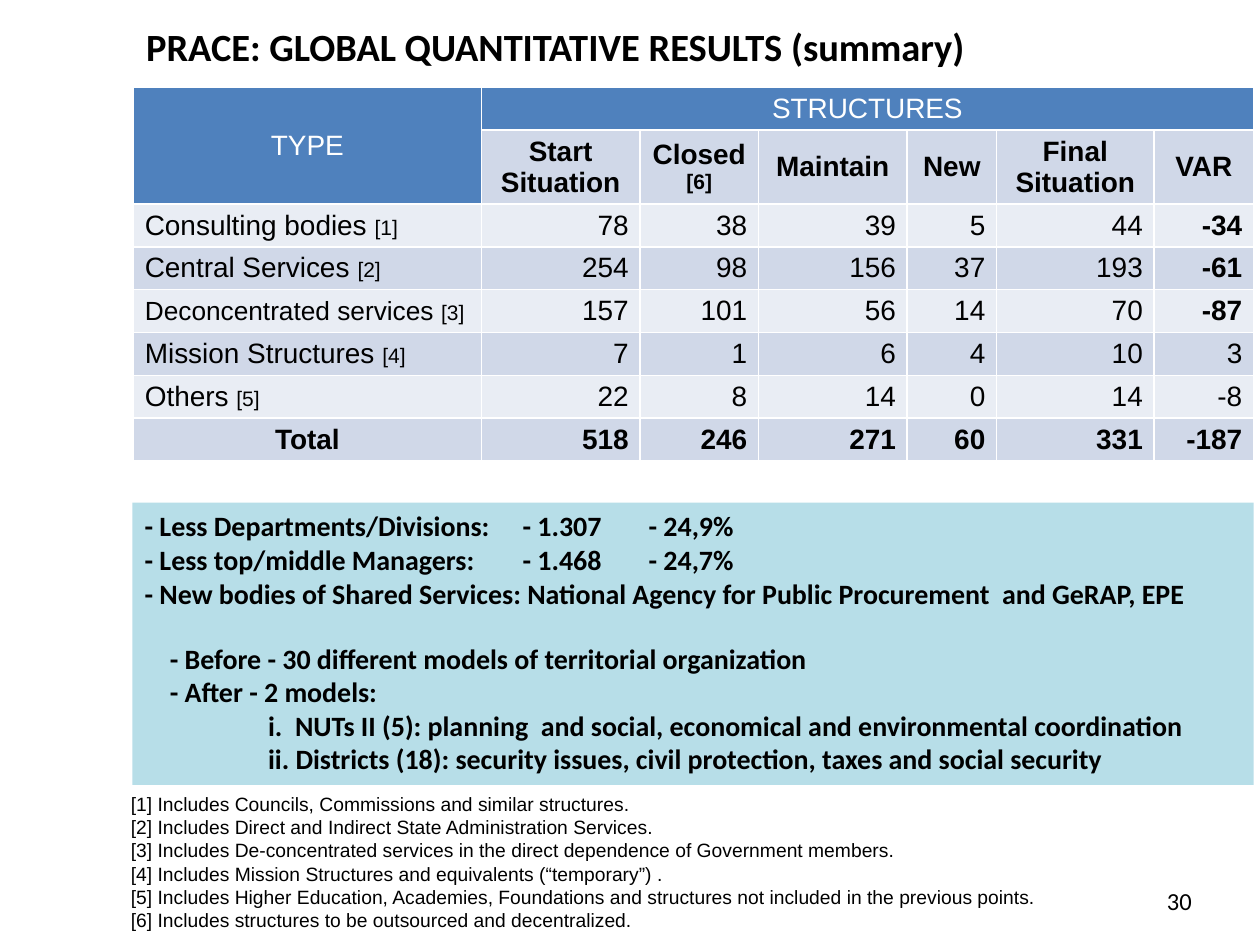
from dataclasses import dataclass

import pptx
import pptx.dml.color
import pptx.enum.shapes
import pptx.enum.text
import pptx.oxml
import pptx.oxml.ns
import pptx.util
from lxml import etree

Inches = pptx.util.Inches
Pt = pptx.util.Pt
ALIGN = pptx.enum.text.PP_ALIGN
ANCHOR = pptx.enum.text.MSO_ANCHOR
qn = pptx.oxml.ns.qn


@dataclass(frozen=True)
class Theme:
    heading_font: str = "Calibri"
    table_font: str = "Arial"
    ink: str = "000000"
    white: str = "FFFFFF"
    header: str = "4F81BD"
    band_dark: str = "D0D8E8"
    band_light: str = "E9EDF4"
    panel: str = "B7DEE8"
    title_size: int = 22
    body_size: int = 16
    tight_size: int = 15
    number_size: int = 14
    note_size: int = 12
    footnote_size: int = 11
    cell_inset: float = 0.09
    border_width: int = 1


def rgb(value):
    return pptx.dml.color.RGBColor.from_string(value)


class SlideBuilder:
    def __init__(self, presentation, theme):
        self.theme = theme
        self.slide = presentation.slides.add_slide(presentation.slide_layouts[5])

    def style(self, paragraph, font, size, color=None, bold=False, align=ALIGN.LEFT):
        paragraph.alignment = align
        paragraph.font.name = font
        paragraph.font.size = Pt(size)
        paragraph.font.bold = bold
        paragraph.font.color.rgb = rgb(color or self.theme.ink)

    def paragraphs(self, frame, lines):
        for index, line in enumerate(lines):
            paragraph = frame.add_paragraph() if index else frame.paragraphs[0]
            paragraph.add_run().text = line
            yield paragraph

    def title(self, text, left, top, width, height):
        heading = self.slide.shapes.title
        heading.left, heading.top = Inches(left), Inches(top)
        heading.width, heading.height = Inches(width), Inches(height)
        frame = heading.text_frame
        frame.word_wrap = False
        frame.auto_size = pptx.enum.text.MSO_AUTO_SIZE.NONE
        frame.vertical_anchor = ANCHOR.TOP
        frame.text = text
        self.style(frame.paragraphs[0], self.theme.heading_font,
                   self.theme.title_size, bold=True)

    def text(self, lines, left, top, width, height, font, size,
             align=ALIGN.LEFT, anchor=ANCHOR.TOP):
        box = self.slide.shapes.add_textbox(
            Inches(left), Inches(top), Inches(width), Inches(height))
        frame = box.text_frame
        frame.word_wrap = True
        frame.vertical_anchor = anchor
        for paragraph in self.paragraphs(frame, lines):
            self.style(paragraph, font, size, align=align)

    def panel(self, items, tab_stops, left, top, width, height):
        rectangle = self.slide.shapes.add_shape(
            pptx.enum.shapes.MSO_SHAPE.RECTANGLE,
            Inches(left), Inches(top), Inches(width), Inches(height))
        rectangle.shadow.inherit = False
        rectangle.fill.solid()
        rectangle.fill.fore_color.rgb = rgb(self.theme.panel)
        rectangle.line.fill.background()
        frame = rectangle.text_frame
        frame.word_wrap = True
        frame.vertical_anchor = ANCHOR.TOP
        lines = [line for line, *_ in items]
        for paragraph, (line, margin, hanging, gap) in zip(
                self.paragraphs(frame, lines), items):
            properties = paragraph._p.get_or_add_pPr()
            properties.set("marL", str(Inches(margin)))
            properties.set("indent", str(Inches(hanging)))
            if gap:
                paragraph.space_before = Pt(gap)
            if "\t" in line:
                tabs = etree.SubElement(properties, qn("a:tabLst"))
                for stop in tab_stops:
                    etree.SubElement(tabs, qn("a:tab"), pos=str(Inches(stop)), algn="l")
            self.style(paragraph, self.theme.heading_font, self.theme.body_size, bold=True)

    def border(self, cell):
        properties = cell._tc.get_or_add_tcPr()
        for side in ("lnL", "lnR", "lnT", "lnB"):
            line = etree.SubElement(properties, qn(f"a:{side}"),
                                    w=str(Pt(self.theme.border_width)))
            fill = etree.SubElement(line, qn("a:solidFill"))
            etree.SubElement(fill, qn("a:srgbClr"), val=self.theme.white)

    def cell(self, cell, lines, note="", size=None, color=None, bold=False,
             align=ALIGN.CENTER):
        cell.vertical_anchor = ANCHOR.MIDDLE
        for paragraph in self.paragraphs(cell.text_frame, lines):
            if note:
                paragraph.runs[0].text += " "
                mark = paragraph.add_run()
                mark.text = note
                mark.font.size = Pt(self.theme.note_size)
            self.style(paragraph, self.theme.table_font,
                       size or self.theme.body_size, color, bold, align)

    def table(self, headings, bodies, totals, left, top, widths, heights):
        theme = self.theme
        grid = self.slide.shapes.add_table(
            len(heights), len(widths), Inches(left), Inches(top),
            Inches(sum(widths)), Inches(sum(heights))).table
        grid.first_row = grid.horz_banding = False
        for column, width in zip(grid.columns, widths):
            column.width = Inches(width)
        for row_index, (row, height) in enumerate(zip(grid.rows, heights)):
            row.height = Inches(height)
            band = theme.band_dark if row_index % 2 else theme.band_light
            for column_index, cell in enumerate(row.cells):
                is_header = row_index == 0 or (row_index == 1 and column_index == 0)
                self.border(cell)
                cell.fill.solid()
                cell.fill.fore_color.rgb = rgb(theme.header if is_header else band)
                cell.margin_left = cell.margin_right = Inches(theme.cell_inset)
                cell.margin_top = cell.margin_bottom = Inches(theme.cell_inset / 2)
        grid.cell(0, 0).merge(grid.cell(1, 0))
        grid.cell(0, 1).merge(grid.cell(0, len(widths) - 1))
        self.cell(grid.cell(0, 0), ["TYPE"], color=theme.white)
        self.cell(grid.cell(0, 1), ["STRUCTURES"], color=theme.white)
        for column, (lines, note) in enumerate(headings, 1):
            self.cell(grid.cell(1, column), lines, note, bold=True)
        for row, (label, size, values, strong) in enumerate(bodies, 2):
            self.cell(grid.cell(row, 0), [label], f"[{row - 1}]", size, align=ALIGN.LEFT)
            for column, value in enumerate(values, 1):
                self.cell(grid.cell(row, column), [str(value)],
                          bold=strong and column == len(values), align=ALIGN.RIGHT)
        last = len(heights) - 1
        self.cell(grid.cell(last, 0), ["Total"], bold=True)
        for column, value in enumerate(totals, 1):
            self.cell(grid.cell(last, column), [str(value)], bold=True, align=ALIGN.RIGHT)


def main():
    presentation = pptx.Presentation()
    presentation.slide_width, presentation.slide_height = Inches(10), Inches(7.5)
    theme = Theme()
    builder = SlideBuilder(presentation, theme)

    headings = [(["Start", "Situation"], ""), (["Closed"], "[6]"), (["Maintain"], ""),
                (["New"], ""), (["Final Situation"], ""), (["VAR"], "")]
    bodies = [
        ("Consulting bodies", theme.body_size, (78, 38, 39, 5, 44, -34), True),
        ("Central Services", theme.body_size, (254, 98, 156, 37, 193, -61), True),
        ("Deconcentrated services", theme.tight_size, (157, 101, 56, 14, 70, -87), True),
        ("Mission Structures", theme.body_size, (7, 1, 6, 4, 10, 3), False),
        ("Others", theme.body_size, (22, 8, 14, 0, 14, -8), False),
    ]
    totals = (518, 246, 271, 60, 331, -187)
    builder.table(headings, bodies, totals, 1.06, 0.69,
                  [2.76, 1.26, 0.94, 1.18, 0.71, 1.25, 0.79],
                  [0.34, 0.59] + [0.34] * 6)

    footnotes = [
        "Councils, Commissions and similar structures.",
        "Direct and Indirect State Administration Services.",
        "De-concentrated services in the direct dependence of Government members.",
        "Mission Structures and equivalents (“temporary”) .",
        "Higher Education, Academies, Foundations and structures not included"
        " in the previous points.",
        "structures to be outsourced and decentralized.",
    ]
    builder.text([f"[{number}] Includes {note}" for number, note in enumerate(footnotes, 1)],
                 0.94, 6.24, 8.98, 1.21, theme.table_font, theme.footnote_size)
    builder.title("PRACE: GLOBAL QUANTITATIVE RESULTS (summary)", 1.06, 0.13, 6.78, 0.47)

    outcomes = [
        ("- Less Departments/Divisions:\t- 1.307\t- 24,9%", 0, 0, 0),
        ("- Less top/middle Managers:\t- 1.468\t- 24,7%", 0, 0, 0),
        ("- New bodies of Shared Services: National Agency for Public Procurement"
         "  and GeRAP, EPE", 0.2, -0.2, 0),
        ("- Before - 30 different models of territorial organization", 0.2, 0, 18),
        ("- After - 2 models:", 0.2, 0, 0),
        ("i.  NUTs II (5): planning  and social, economical and environmental"
         " coordination", 0.98, 0, 0),
        ("ii. Districts (18): security issues, civil protection, taxes and social"
         " security", 0.98, 0, 0),
    ]
    builder.panel(outcomes, (2.88, 3.77), 1.05, 3.99, 8.9, 2.24)
    builder.text(["30"], 9, 6.95, 0.72, 0.4, theme.heading_font, theme.number_size,
                 ALIGN.CENTER, ANCHOR.MIDDLE)
    presentation.save("out.pptx")


if __name__ == "__main__":
    main()
